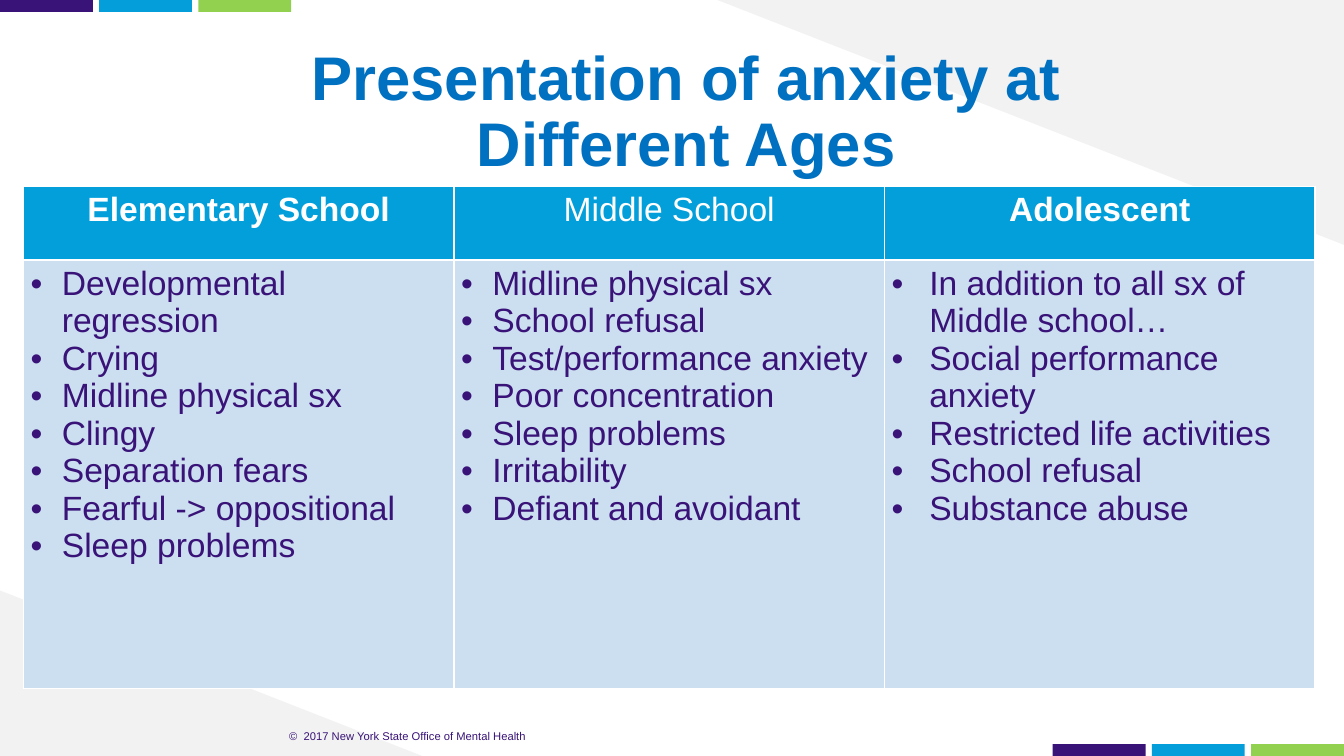
from lxml import etree
from pptx import Presentation
from pptx.dml.color import RGBColor
from pptx.enum.shapes import MSO_SHAPE
from pptx.enum.text import MSO_ANCHOR, MSO_AUTO_SIZE, PP_ALIGN
from pptx.oxml.ns import qn
from pptx.util import Cm, Pt

RECT = MSO_SHAPE.RECTANGLE
MIDDLE = MSO_ANCHOR.MIDDLE
NO_FIT = MSO_AUTO_SIZE.NONE
CENTER = PP_ALIGN.CENTER

# Content
TITLE = "Presentation of anxiety at Different Ages"
COPYRIGHT = "©  2017 New York State Office of Mental Health"
AGES = [  # heading, bold heading, bullet indent in cm, points
    ("Elementary School", True, 0.79,
     ["Developmental regression", "Crying", "Midline physical sx", "Clingy",
      "Separation fears", "Fearful -> oppositional", "Sleep problems"]),
    ("Middle School", False, 0.79,
     ["Midline physical sx", "School refusal", "Test/performance anxiety",
      "Poor concentration", "Sleep problems", "Irritability",
      "Defiant and avoidant"]),
    ("Adolescent", True, 0.95,
     ["In addition to all sx of Middle school…", "Social performance anxiety",
      "Restricted life activities", "School refusal", "Substance abuse"]),
]
COLORS = {"purple": "391378", "cyan": "049FDA", "green": "92D050",
          "gray": "F2F2F2", "title": "0070C0", "header": "039FDA",
          "body": "CCDFF1", "white": "FFFFFF"}

# Layout, in cm
WIDTH, HEIGHT = 33.87, 19.05
CORNERS = [
    [(0, 14.88), (0, HEIGHT), (10.64, HEIGHT)],
    [(WIDTH, 6.17), (WIDTH, 0), (18.08, 0)],
]
BAR_W, BAR_H, BAR_STEP = 2.34, 0.3, 2.5
BAR_STARTS = [(0, 0), (26.53, HEIGHT - BAR_H)]
TITLE_BOX = (4.6, 1.48, 25.4, 2.77)
FOOTER_BOX = (4.6, 18.24, 11.35, 0.61)
TABLE_LEFT, TABLE_TOP, COL_W = 0.59, 4.69, 10.85
ROW_HEIGHTS = (1.86, 10.8)


def rgb(name):
    return RGBColor.from_string(COLORS[name])


def paint(s, color):
    s.fill.solid()
    s.fill.fore_color.rgb = rgb(color)
    s.line.fill.background()
    s.shadow.inherit = False


def write(p, text, color, **formats):
    r = p.add_run()
    r.text = text
    r.font.color.rgb = rgb(color)
    for name, value in {"name": "Arial", **formats}.items():
        setattr(r.font, name, value)


def set_frame(tf):
    formats = {"word_wrap": True, "auto_size": NO_FIT, "vertical_anchor": MIDDLE,
               "margin_left": Cm(0.13), "margin_right": Cm(0.13),
               "margin_top": Cm(0.13), "margin_bottom": Cm(0.13)}
    for name, value in formats.items():
        setattr(tf, name, value)


def add_bullet(p, indent):
    pPr = p._p.get_or_add_pPr()
    pPr.set("marL", str(Cm(indent)))
    pPr.set("indent", str(-Cm(indent)))
    etree.SubElement(pPr, qn("a:buFont")).set("typeface", "Arial")
    etree.SubElement(pPr, qn("a:buChar")).set("char", "•")


def style_cell(cell, color, bottom):
    cell.fill.solid()
    cell.fill.fore_color.rgb = rgb(color)
    margins = {"margin_left": 0.18, "margin_right": 0.18,
               "margin_top": 0.13, "margin_bottom": 0.13}
    for name, value in margins.items():
        setattr(cell, name, Cm(value))
    tcPr = cell._tc.get_or_add_tcPr()
    borders = {"a:lnL": 1, "a:lnR": 1, "a:lnT": 1, "a:lnB": bottom}
    for i, (tag, width) in enumerate(borders.items()):
        ln = etree.Element(qn(tag), w=str(Pt(width)))
        fill = etree.SubElement(ln, qn("a:solidFill"))
        etree.SubElement(fill, qn("a:srgbClr")).set("val", COLORS["white"])
        tcPr.insert(i, ln)


prs = Presentation()
prs.slide_width, prs.slide_height = Cm(WIDTH), Cm(HEIGHT)
slide = prs.slides.add_slide(prs.slide_layouts[5])
shapes = slide.shapes

# Corner triangles
for corner in CORNERS:
    points = [(Cm(x), Cm(y)) for x, y in corner]
    builder = shapes.build_freeform(*points[0])
    builder.add_line_segments(points[1:], close=True)
    paint(builder.convert_to_shape(), "gray")

# Color bars
for left, top in BAR_STARTS:
    for i, color in enumerate(("purple", "cyan", "green")):
        paint(shapes.add_shape(RECT, Cm(left + i * BAR_STEP), Cm(top),
                               Cm(BAR_W), Cm(BAR_H)), color)

# Copyright line
tf = shapes.add_textbox(*map(Cm, FOOTER_BOX)).text_frame
set_frame(tf)
tf.paragraphs[0].alignment = CENTER
write(tf.paragraphs[0], COPYRIGHT, "purple", size=Pt(8))

# Title, raised above the corner triangles
title = shapes.title
title.element.getparent().append(title.element)
title.left, title.top, title.width, title.height = map(Cm, TITLE_BOX)
set_frame(title.text_frame)
p = title.text_frame.paragraphs[0]
p.alignment, p.line_spacing = CENTER, 0.9
write(p, TITLE, "title", size=Pt(44), bold=True)

# Table of ages
table = shapes.add_table(2, len(AGES), Cm(TABLE_LEFT), Cm(TABLE_TOP),
                         Cm(COL_W * len(AGES)), Cm(sum(ROW_HEIGHTS))).table
for row, height in zip(table.rows, ROW_HEIGHTS):
    row.height = Cm(height)
for col, (heading, bold, indent, points) in enumerate(AGES):
    table.columns[col].width = Cm(COL_W)
    header, body = table.cell(0, col), table.cell(1, col)
    style_cell(header, "header", 1.5)
    style_cell(body, "body", 1)
    p = header.text_frame.paragraphs[0]
    p.alignment = CENTER
    write(p, heading, "white", size=Pt(24), bold=bold)
    tf = body.text_frame
    for i, point in enumerate(points):
        p = tf.add_paragraph() if i else tf.paragraphs[0]
        add_bullet(p, indent)
        write(p, point, "purple", size=Pt(24), bold=False)

prs.save("out.pptx")
